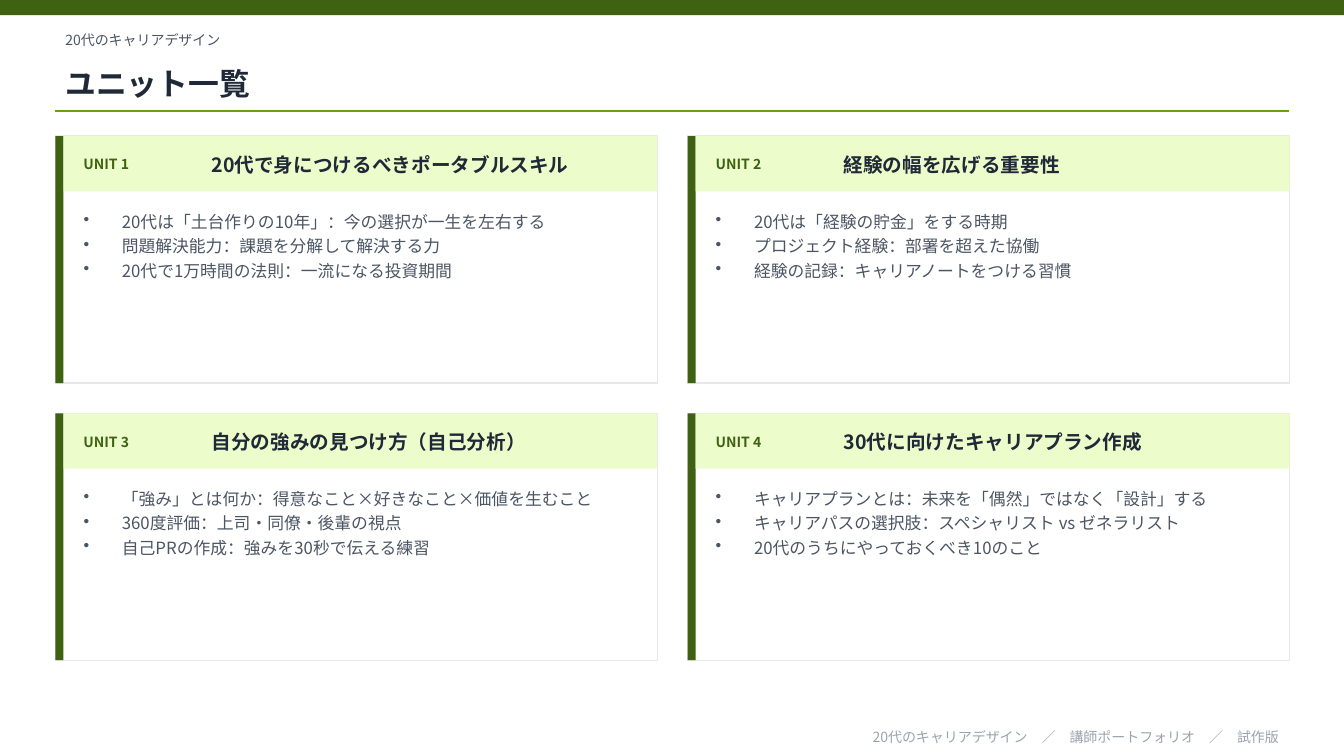
"""Builds the unit overview slide of a career design course."""
from dataclasses import dataclass

from lxml.etree import SubElement
from pptx import Presentation
from pptx.dml.color import RGBColor as Rgb
from pptx.enum.shapes import MSO_CONNECTOR as Connector, MSO_SHAPE as Shape
from pptx.enum.text import MSO_ANCHOR as Anchor, PP_ALIGN as Align
from pptx.oxml.ns import qn
from pptx.slide import Slide
from pptx.util import Inches, Pt

FONT = "Noto Sans CJK JP"
COLORS = {
    "dark_green": "3F6212",
    "green": "65A30D",
    "pale_green": "ECFCCB",
    "ink": "1F2937",
    "body": "4B5563",
    "muted": "9CA3AF",
    "border": "E5E7EB",
    "white": "FFFFFF",
}
SLIDE_WIDTH, SLIDE_HEIGHT = 13.33, 7.5
MARGIN, CONTENT_WIDTH = 0.55, 12.23
CARD_TOP, CARD_WIDTH, CARD_HEIGHT, GAP = 1.35, 5.97, 2.45, 0.3
ACCENT_WIDTH, HEADER_HEIGHT = 0.08, 0.55
BULLET_INDENT = 0.38


@dataclass(frozen=True)
class Box:
    left: float
    top: float
    width: float
    height: float

    def lengths(self) -> list[Inches]:
        return [Inches(v) for v in (self.left, self.top, self.width, self.height)]


@dataclass(frozen=True)
class Style:
    size: int
    color: str
    bold: bool = False
    align: Align = Align.LEFT
    anchor: Anchor = Anchor.MIDDLE
    bulleted: bool = False


@dataclass(frozen=True)
class Unit:
    title: str
    points: tuple[str, ...]


COURSE = Style(10, "body")
HEADING = Style(22, "ink", bold=True)
UNIT_LABEL = Style(10, "dark_green", bold=True)
UNIT_TITLE = Style(14, "ink", bold=True)
UNIT_POINTS = Style(12, "body", anchor=Anchor.TOP, bulleted=True)
FOOTER = Style(10, "muted", align=Align.RIGHT)

UNITS = (
    Unit("20代で身につけるべきポータブルスキル", (
        "20代は「土台作りの10年」：今の選択が一生を左右する",
        "問題解決能力：課題を分解して解決する力",
        "20代で1万時間の法則：一流になる投資期間",
    )),
    Unit("経験の幅を広げる重要性", (
        "20代は「経験の貯金」をする時期",
        "プロジェクト経験：部署を超えた協働",
        "経験の記録：キャリアノートをつける習慣",
    )),
    Unit("自分の強みの見つけ方（自己分析）", (
        "「強み」とは何か：得意なこと×好きなこと×価値を生むこと",
        "360度評価：上司・同僚・後輩の視点",
        "自己PRの作成：強みを30秒で伝える練習",
    )),
    Unit("30代に向けたキャリアプラン作成", (
        "キャリアプランとは：未来を「偶然」ではなく「設計」する",
        "キャリアパスの選択肢：スペシャリスト vs ゼネラリスト",
        "20代のうちにやっておくべき10のこと",
    )),
)


def color(name: str) -> Rgb:
    return Rgb.from_string(COLORS[name])


def add_rect(slide: Slide, box: Box, fill: str, border: str | None = None) -> None:
    rect = slide.shapes.add_shape(Shape.RECTANGLE, *box.lengths())
    rect.shadow.inherit = False
    rect.fill.solid()
    rect.fill.fore_color.rgb = color(fill)
    if border:
        rect.line.color.rgb = color(border)
        rect.line.width = Pt(1)
    else:
        rect.line.fill.background()


def add_text(slide: Slide, box: Box, text: str, style: Style) -> None:
    frame = slide.shapes.add_textbox(*box.lengths()).text_frame
    frame.word_wrap = True
    frame.vertical_anchor = style.anchor
    frame.text = text
    for paragraph in frame.paragraphs:
        paragraph.alignment = style.align
        if style.bulleted:
            properties = paragraph._p.get_or_add_pPr()
            properties.set("marL", str(Inches(BULLET_INDENT)))
            properties.set("indent", str(-Inches(BULLET_INDENT)))
            SubElement(properties, qn("a:buChar"), char="•")
            paragraph.space_after = Pt(3)
        for run in paragraph.runs:
            run.font.name = FONT
            run.font.size = Pt(style.size)
            run.font.bold = style.bold
            run.font.color.rgb = color(style.color)
            SubElement(run._r.get_or_add_rPr(), qn("a:ea"), typeface=FONT)


def add_rule(slide: Slide, top: float) -> None:
    rule = slide.shapes.add_connector(
        Connector.STRAIGHT, Inches(MARGIN), Inches(top),
        Inches(MARGIN + CONTENT_WIDTH), Inches(top))
    rule.line.color.rgb = color("green")
    rule.line.width = Pt(1)
    SubElement(rule._element.spPr, qn("a:effectLst"))


def add_unit(slide: Slide, index: int, unit: Unit) -> None:
    row, column = divmod(index, 2)
    left = MARGIN + column * (CARD_WIDTH + GAP)
    top = CARD_TOP + row * (CARD_HEIGHT + GAP)
    inner = left + ACCENT_WIDTH
    add_rect(slide, Box(left, top, CARD_WIDTH, CARD_HEIGHT), "white", "border")
    add_rect(slide, Box(left, top, ACCENT_WIDTH, CARD_HEIGHT), "dark_green")
    add_rect(slide, Box(inner, top, CARD_WIDTH - ACCENT_WIDTH, HEADER_HEIGHT), "pale_green")
    add_text(slide, Box(inner + 0.1, top + 0.08, 1.2, 0.4), f"UNIT {index + 1}", UNIT_LABEL)
    add_text(slide, Box(left + 1.45, top + 0.08, 4.37, 0.4), unit.title, UNIT_TITLE)
    add_text(slide, Box(inner + 0.1, top + 0.7, 5.61, 1.6), "\n".join(unit.points), UNIT_POINTS)


def main() -> None:
    deck = Presentation()
    deck.slide_width, deck.slide_height = Inches(SLIDE_WIDTH), Inches(SLIDE_HEIGHT)
    slide = deck.slides.add_slide(deck.slide_layouts[6])
    add_rect(slide, Box(0, 0, SLIDE_WIDTH, 0.15), "dark_green")
    add_text(slide, Box(MARGIN, 0.25, CONTENT_WIDTH, 0.3), "20代のキャリアデザイン", COURSE)
    add_text(slide, Box(MARGIN, 0.55, CONTENT_WIDTH, 0.55), "ユニット一覧", HEADING)
    add_rule(slide, 1.1)
    for index, unit in enumerate(UNITS):
        add_unit(slide, index, unit)
    add_text(slide, Box(MARGIN, 7.2, CONTENT_WIDTH, 0.22),
             "20代のキャリアデザイン　／　講師ポートフォリオ　／　試作版", FOOTER)
    deck.save("out.pptx")


if __name__ == "__main__":
    main()
